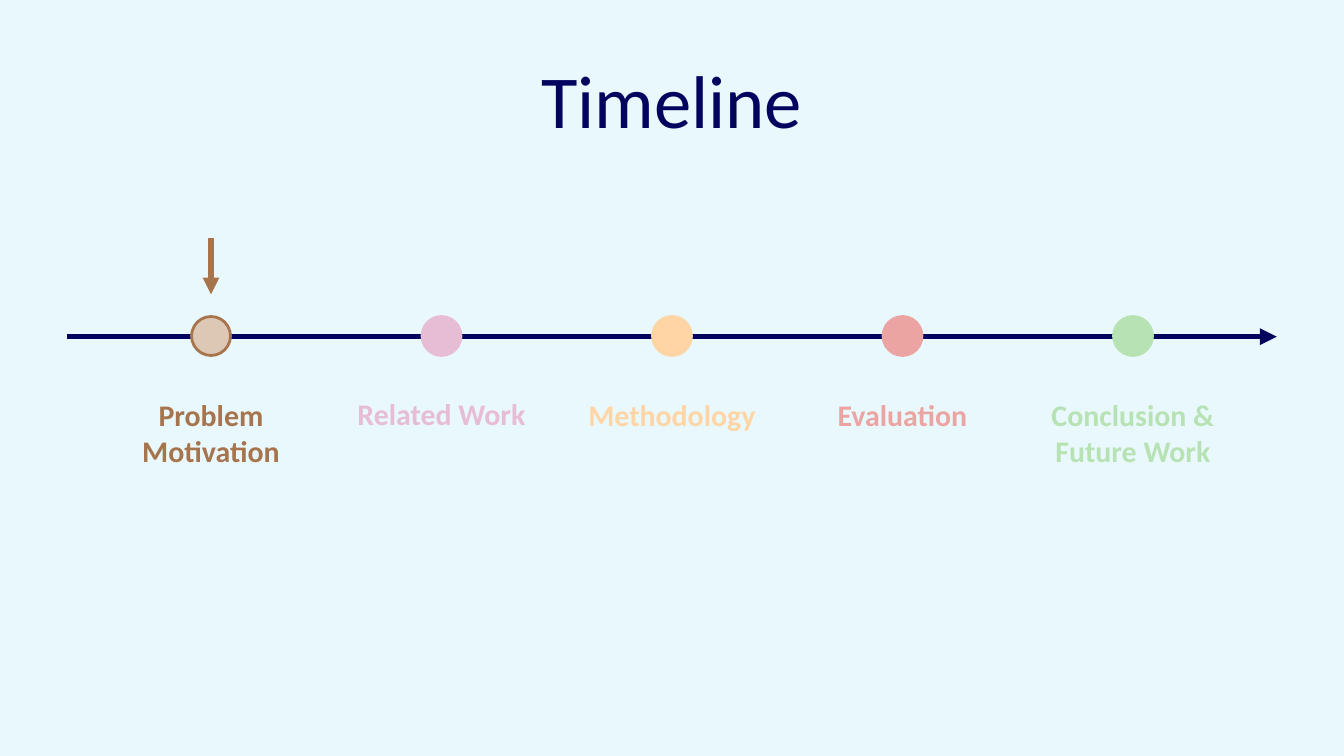
from dataclasses import dataclass

import lxml.etree
import pptx
import pptx.dml.color
import pptx.enum.shapes
import pptx.enum.text
import pptx.oxml.ns
import pptx.util

PX = 9144  # EMU per px, 100 px to the inch


@dataclass(frozen=True)
class Theme:
    font: str = "Calibri"
    background: str = "E9F8FC"
    navy: str = "03045E"
    title_pt: int = 80
    label_pt: int = 32
    axis_pt: int = 6
    ring_pt: int = 3


@dataclass(frozen=True)
class Milestone:
    label: str
    color: str
    fill: str = ""
    active: bool = False
    label_top: int = 232


@dataclass(frozen=True)
class Box:
    left: int
    top: int
    width: int
    height: int

    def emu(self):
        return [v * PX for v in (self.left, self.top, self.width, self.height)]


THEME = Theme()
MILESTONES = [
    Milestone("Problem Motivation", "A7754D", fill="DDC8B6", active=True),
    Milestone("Related Work", "E7BDD3", label_top=230),
    Milestone("Methodology", "FFD5A5"),
    Milestone("Evaluation", "EBA4A1"),
    Milestone("Conclusion & Future Work", "B7E3B4"),
]


def rgb(color):
    return pptx.dml.color.RGBColor.from_string(color)


def set_all(obj, values):
    for name, value in values.items():
        setattr(obj, name, value)


def write(sp, text, color, size, bold=False):
    """Put one centred, top-anchored paragraph into a shape."""
    tf = sp.text_frame
    set_all(tf, {
        "word_wrap": True,
        "auto_size": pptx.enum.text.MSO_AUTO_SIZE.NONE,
        "vertical_anchor": pptx.enum.text.MSO_ANCHOR.TOP,
    })
    p = tf.paragraphs[0]
    p.alignment = pptx.enum.text.PP_ALIGN.CENTER
    r = p.add_run()
    r.text = text
    set_all(r.font, {"name": THEME.font, "size": pptx.util.Pt(size), "bold": bold})
    r.font.color.rgb = rgb(color)


def add_arrow(slide, x1, y1, x2, y2, color):
    sp = slide.shapes.add_connector(
        pptx.enum.shapes.MSO_CONNECTOR.STRAIGHT, x1 * PX, y1 * PX, x2 * PX, y2 * PX)
    sp.line.width = pptx.util.Pt(THEME.axis_pt)
    sp.line.color.rgb = rgb(color)
    ln = sp.line._get_or_add_ln()
    lxml.etree.SubElement(ln, pptx.oxml.ns.qn("a:tailEnd"), type="triangle")
    lxml.etree.SubElement(sp._element.spPr, pptx.oxml.ns.qn("a:effectLst"))


def add_title(slide, box, text):
    sp = slide.shapes.title
    set_all(sp, dict(zip(("left", "top", "width", "height"), box.emu())))
    write(sp, text, THEME.navy, THEME.title_pt)


def add_milestone(slide, x, top, axis_y, m):
    """Place a dot on the axis at x, its label, and a pointer if it is active."""
    dot, label_width = 58, 308
    circle = Box(x - dot // 2, axis_y - dot // 2 - 1, dot, dot)
    sp = slide.shapes.add_shape(pptx.enum.shapes.MSO_SHAPE.OVAL, *circle.emu())
    sp.shadow.inherit = False
    sp.fill.solid()
    sp.fill.fore_color.rgb = rgb(m.fill or m.color)
    sp.line.color.rgb = rgb(m.color)
    sp.line.width = pptx.util.Pt(THEME.ring_pt)

    label_height = 118 if "Work" in m.label and "&" in m.label or m.active else 64
    label = Box(x - label_width // 2, top + m.label_top, label_width, label_height)
    write(slide.shapes.add_textbox(*label.emu()), m.label, m.color, THEME.label_pt, bold=True)

    if m.active:
        add_arrow(slide, x, top, x, top + 84, m.color)


def add_timeline(slide, box, milestones):
    pitch = 343
    axis_y = box.top + 147
    add_arrow(slide, box.left, axis_y, box.left + box.width, axis_y, THEME.navy)
    first = box.left + (box.width - pitch * (len(milestones) - 1)) // 2
    for i, m in enumerate(milestones):
        add_milestone(slide, first + i * pitch, box.top, axis_y, m)


def main():
    prs = pptx.Presentation()
    set_all(prs, {"slide_width": 2000 * PX, "slide_height": 1125 * PX})
    slide = prs.slides.add_slide(prs.slide_layouts[5])
    slide.background.fill.solid()
    slide.background.fill.fore_color.rgb = rgb(THEME.background)
    add_title(slide, Box(200, 75, 1600, 145), "Timeline")
    add_timeline(slide, Box(100, 354, 1800, 350), MILESTONES)
    prs.save("out.pptx")


if __name__ == "__main__":
    main()
